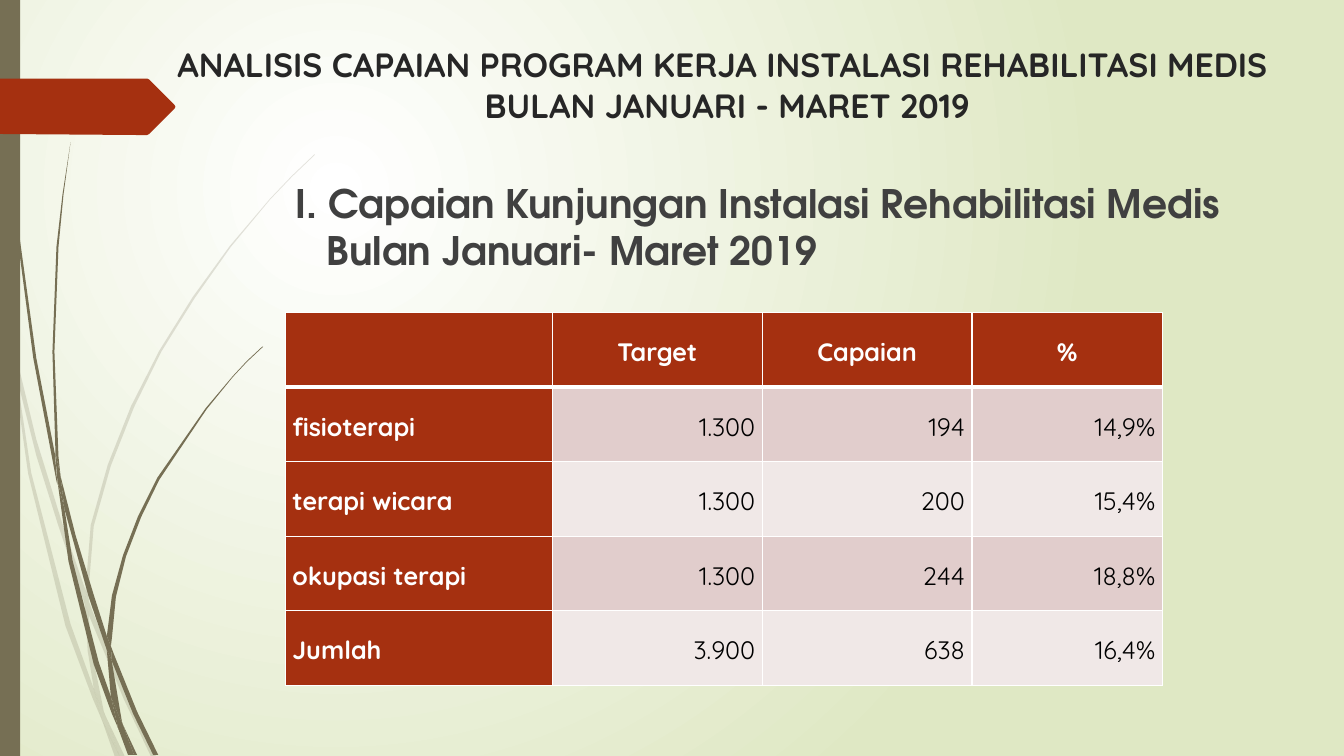
from dataclasses import dataclass

from lxml import etree
from pptx import Presentation
from pptx.dml.color import RGBColor
from pptx.enum.shapes import MSO_SHAPE
from pptx.enum.text import MSO_ANCHOR, PP_ALIGN
from pptx.oxml.ns import qn
from pptx.slide import Slide
from pptx.util import Inches, Pt

RECTANGLE = MSO_SHAPE.RECTANGLE
TOP, MIDDLE = MSO_ANCHOR.TOP, MSO_ANCHOR.MIDDLE
LEFT, CENTER, RIGHT = PP_ALIGN.LEFT, PP_ALIGN.CENTER, PP_ALIGN.RIGHT


@dataclass(frozen=True)
class Theme:
    heading_font: str = "Quicksand"
    body_font: str = "TeX Gyre Adventor"
    title_size: int = 24
    body_size: int = 28
    table_size: int = 18
    title_ink: str = "262626"
    body_ink: str = "404040"
    white: str = "FFFFFF"
    black: str = "000000"
    backdrop: str = "DFE8C4"
    grass: str = "766F54"
    accent: str = "A53010"
    odd_row: str = "E1CDCC"
    even_row: str = "F0E8E7"


@dataclass(frozen=True)
class Outline:
    """A closed outline: x, y, x, y ... in hundredths of an inch."""
    coords: tuple[int, ...]
    color: str
    opacity: int = 100


@dataclass(frozen=True)
class TextBlock:
    text: str
    box: tuple[float, float, float, float]
    font: str
    size: int
    color: str
    align: PP_ALIGN
    anchor: MSO_ANCHOR
    bottom_inset: float = 0.05
    hanging: float = 0
    space_before: int = 0


THEME = Theme()

PALE_BLADES = (
    (11, 350, 9, 322, 0, 282, 0, 299, 10, 344),
    (58, 522, 84, 599, 85, 586, 62, 520, 36, 436, 14, 345, 17, 376, 36, 452),
    (92, 607, 88, 596, 88, 610, 123, 694, 150, 751, 155, 751, 127, 692),
    (119, 751, 124, 751, 105, 711),
    (93, 683, 70, 619, 31, 469, 17, 376, 11, 350, 28, 470, 65, 621, 92, 693, 101, 714, 99, 707),
    (84, 599, 87, 646, 93, 683, 96, 692, 105, 711, 103, 706, 91, 646, 88, 610, 88, 608),
    (88, 584, 93, 522, 110, 462, 133, 404, 160, 349, 193, 296, 229, 245, 268, 198, 290, 175,
     312, 154, 312, 153, 289, 175, 268, 197, 228, 244, 191, 295, 158, 348, 130, 403, 107, 461,
     90, 521, 85, 584, 85, 586, 88, 596),
    (101, 714, 114, 751, 119, 751),
    (88, 608, 88, 610, 88, 596, 85, 586, 84, 599),
    (96, 692, 93, 683, 99, 707, 101, 714, 119, 751, 105, 711),
)
DARK_BLADES = (
    (7, 110, 17, 233, 33, 355, 56, 477, 57, 481, 55, 457, 55, 453, 36, 355, 19, 232, 8, 109,
     5, 48, 4, 0, 3, 0, 4, 48),
    (88, 592, 106, 645, 106, 633, 106, 631, 93, 590, 75, 531, 60, 472, 64, 505),
    (113, 649, 110, 641, 111, 656, 132, 708, 152, 749, 157, 749, 136, 706),
    (110, 691, 98, 657, 72, 556, 64, 505, 57, 477, 68, 557, 93, 659, 111, 708, 117, 722, 116, 717),
    (60, 472, 58, 453, 54, 349, 58, 245, 63, 193, 70, 141, 70, 141, 62, 193, 56, 245, 52, 349,
     55, 449),
    (133, 749, 136, 749, 122, 719),
    (57, 477, 64, 505, 60, 472, 55, 449, 55, 453),
    (111, 633, 115, 592, 125, 552, 140, 513, 158, 476, 205, 406, 231, 374, 245, 359, 261, 344,
     260, 344, 245, 358, 231, 373, 204, 405, 156, 474, 137, 512, 122, 551, 111, 591, 106, 631,
     110, 641),
    (117, 722, 127, 749, 131, 749),
    (106, 645, 110, 691, 116, 706, 122, 719, 121, 716, 111, 656, 109, 651),
    (106, 645, 109, 651, 111, 656, 110, 641, 106, 631, 106, 633),
    (116, 706, 110, 691, 116, 717, 117, 722, 130, 749, 133, 749, 122, 719),
)
PAGE_TAG = (173, 108, 148, 133, 146, 134, 136, 134, 0, 133, 0, 78, 136, 78, 146, 78, 148, 79,
            173, 104, 174, 106)

TITLE = TextBlock(
    "ANALISIS CAPAIAN PROGRAM KERJA INSTALASI REHABILITASI MEDIS \vBULAN JANUARI - MARET 2019",
    (1.25, -0.02, 11.92, 2), THEME.heading_font, THEME.title_size, THEME.title_ink,
    CENTER, MIDDLE, bottom_inset=0.33)
SUBHEADING = TextBlock(
    "I. Capaian Kunjungan Instalasi Rehabilitasi Medis Bulan Januari- Maret 2019",
    (2.83, 1.73, 9.75, 4.74), THEME.body_font, THEME.body_size, THEME.body_ink,
    LEFT, TOP, hanging=0.31, space_before=10)

VISITS = (
    ("", "Target", "Capaian", "%"),
    ("fisioterapi", "1.300", "194", "14,9%"),
    ("terapi wicara", "1.300", "200", "15,4%"),
    ("okupasi terapi", "1.300", "244", "18,8%"),
    ("Jumlah", "3.900", "638", "16,4%"),
)
COLUMN_WIDTHS = (2.65, 2.08, 2.08, 1.89)
ROW_HEIGHT = 0.74


def rgb(color: str) -> RGBColor:
    return RGBColor.from_string(color)


def paint_backdrop(slide: Slide) -> None:
    fill = slide.background.fill
    fill.gradient()
    for stop, color in zip(fill.gradient_stops, (THEME.white, THEME.backdrop)):
        stop.color.rgb = rgb(color)
    # Radial gradient centred on the upper left quarter
    gradient = next(slide.element.iter(qn("a:gradFill")))
    gradient.remove(gradient.find(qn("a:lin")))
    radial = etree.SubElement(gradient, qn("a:path"), path="circle")
    etree.SubElement(radial, qn("a:fillToRect"), l="50000", t="50000", r="100000", b="100000")


def draw_outline(slide: Slide, outline: Outline) -> None:
    points = list(zip(outline.coords[::2], outline.coords[1::2]))
    builder = slide.shapes.build_freeform(*points[0], scale=Inches(0.01))
    builder.add_line_segments(points[1:], close=True)
    shape = builder.convert_to_shape()
    shape.shadow.inherit = False
    shape.line.fill.background()
    shape.fill.solid()
    shape.fill.fore_color.rgb = rgb(outline.color)
    if outline.opacity < 100:
        color = shape.element.spPr.find(qn("a:solidFill"))[0]
        etree.SubElement(color, qn("a:alpha"), val=str(outline.opacity * 1000))


def draw_text(slide: Slide, block: TextBlock) -> None:
    frame = slide.shapes.add_textbox(*map(Inches, block.box)).text_frame
    frame.word_wrap = True
    frame.vertical_anchor = block.anchor
    frame.margin_bottom = Inches(block.bottom_inset)
    paragraph = frame.paragraphs[0]
    paragraph.text = block.text
    paragraph.alignment = block.align
    paragraph.space_before = Pt(block.space_before)
    paragraph.font.name = block.font
    paragraph.font.size = Pt(block.size)
    paragraph.font.bold = True
    paragraph.font.color.rgb = rgb(block.color)
    if block.hanging:
        properties = paragraph._p.get_or_add_pPr()
        properties.set("marL", str(Inches(block.hanging)))
        properties.set("indent", str(-Inches(block.hanging)))


def draw_borders(cell, top: int, bottom: int) -> None:
    properties = cell._tc.get_or_add_tcPr()
    for position, (side, width) in enumerate(
            (("lnL", 1), ("lnR", 1), ("lnT", top), ("lnB", bottom))):
        border = etree.Element(qn(f"a:{side}"), w=str(Pt(width)))
        solid = etree.SubElement(border, qn("a:solidFill"))
        etree.SubElement(solid, qn("a:srgbClr"), val=THEME.white)
        properties.insert(position, border)


def draw_visits(slide: Slide) -> None:
    table = slide.shapes.add_table(
        len(VISITS), len(COLUMN_WIDTHS), Inches(2.83), Inches(3.1),
        Inches(sum(COLUMN_WIDTHS)), Inches(ROW_HEIGHT * len(VISITS))).table
    for column, width in zip(table.columns, COLUMN_WIDTHS):
        column.width = Inches(width)
    for r, entries in enumerate(VISITS):
        for c, entry in enumerate(entries):
            is_label = r == 0 or c == 0
            band = THEME.odd_row if r % 2 else THEME.even_row
            cell = table.cell(r, c)
            cell.vertical_anchor = MIDDLE
            cell.margin_left = cell.margin_right = Inches(0.07)
            cell.margin_top = cell.margin_bottom = 0
            cell.fill.solid()
            cell.fill.fore_color.rgb = rgb(THEME.accent if is_label else band)
            draw_borders(cell, top=3 if r == 1 else 1, bottom=3 if r == 0 else 1)
            paragraph = cell.text_frame.paragraphs[0]
            paragraph.text = entry
            paragraph.alignment = CENTER if r == 0 else LEFT if c == 0 else RIGHT
            paragraph.line_spacing = 1.15
            paragraph.space_after = Pt(10)
            paragraph.font.name = THEME.heading_font
            paragraph.font.size = Pt(THEME.table_size)
            paragraph.font.bold = is_label
            paragraph.font.color.rgb = rgb(THEME.white if is_label else THEME.black)


def main() -> None:
    deck = Presentation()
    deck.slide_width, deck.slide_height = Inches(13.33), Inches(7.5)
    slide = deck.slides.add_slide(deck.slide_layouts[6])
    paint_backdrop(slide)

    # Grass blades, side bar and page tag
    for blade in PALE_BLADES:
        draw_outline(slide, Outline(blade, THEME.grass, opacity=20))
    for blade in DARK_BLADES:
        draw_outline(slide, Outline(blade, THEME.grass))
    side_bar = slide.shapes.add_shape(RECTANGLE, 0, 0, Inches(0.2), deck.slide_height)
    side_bar.shadow.inherit = False
    side_bar.line.fill.background()
    side_bar.fill.solid()
    side_bar.fill.fore_color.rgb = rgb(THEME.grass)
    draw_outline(slide, Outline(PAGE_TAG, THEME.accent))

    # Headings and table of visits
    draw_text(slide, TITLE)
    draw_text(slide, SUBHEADING)
    draw_visits(slide)
    deck.save("out.pptx")


if __name__ == "__main__":
    main()
